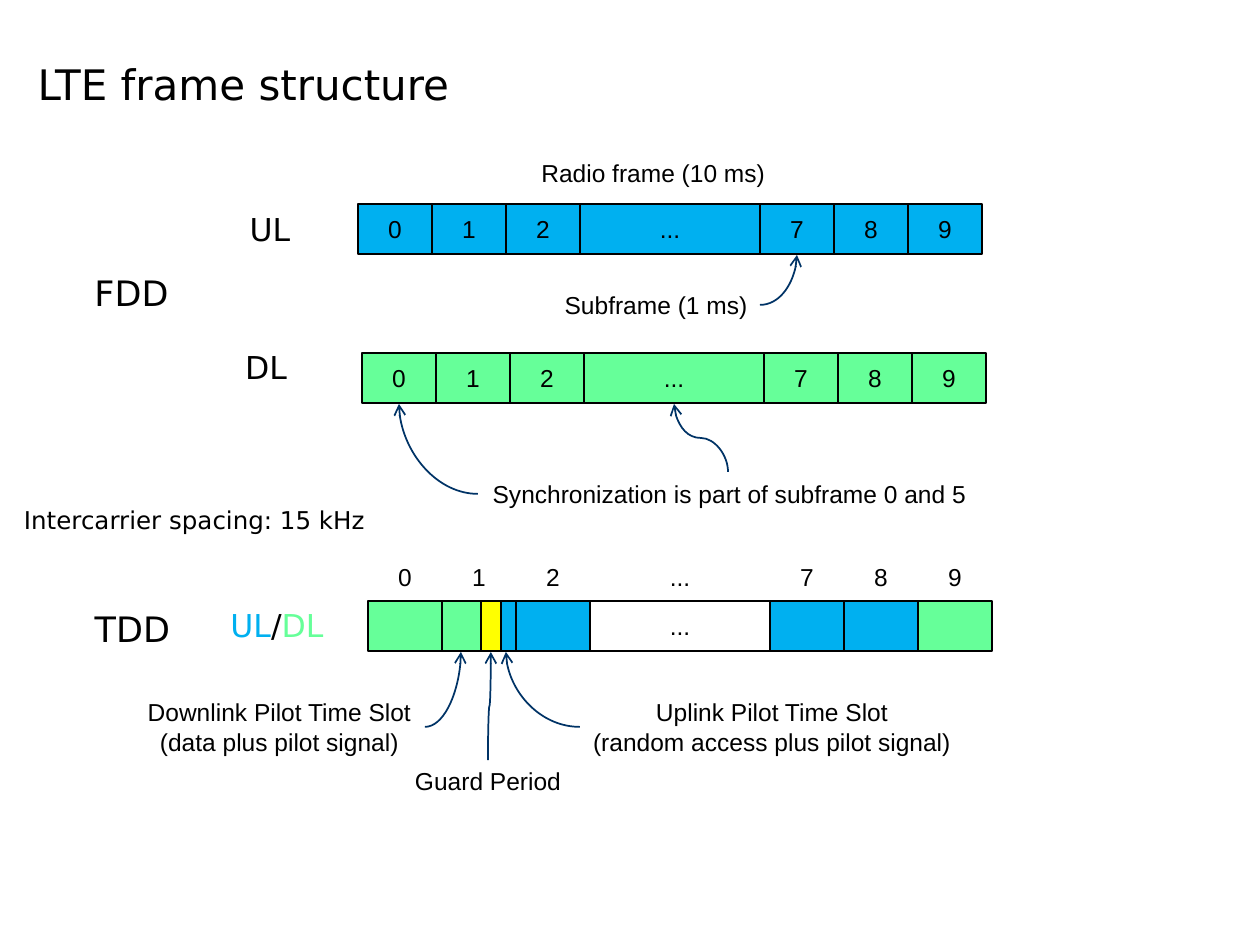
from copy import deepcopy
from itertools import accumulate
from lxml import etree
from pptx import Presentation
from pptx import util as u
from pptx.dml.color import RGBColor
from pptx.enum import shapes, text
from pptx.oxml import ns


class Theme:
    black, navy = "000000", "003366"
    up, down, guard = "00B0F0", "66FF99", "FFFF00"
    sans, deja = "Arial", "DejaVu Sans"
    small, mid, large, head = 14, 18, 20, 24
    edge, arrow = 0.75, 1


T = Theme
LEFT, MID, RIGHT = text.PP_ALIGN.LEFT, text.PP_ALIGN.CENTER, text.PP_ALIGN.RIGHT

# Content: lengths in px, 126 to the inch
TITLE = "LTE frame structure"
NAMES = ["0", "1", "2", "...", "7", "8", "9"]
WIDTHS = [74, 74, 74, 180, 74, 74, 74]
HIGH = 50

# left, top, cell texts, cell fills
FRAMES = [
    (358, 204, NAMES, [T.up] * 7),
    (362, 353, NAMES, [T.down] * 7),
    (368, 601, ["", "", "", "...", "", "", ""],
     [T.down, T.down, T.up, None, T.up, T.up, T.down]),
]
HEADS = (368, 552)
SLOTS = [(495, 601, 21, T.up), (481, 601, 20, T.guard)]

# box, align, text, font, size
LABELS = [
    ((529, 152, 249, 43), LEFT, "Radio frame (10 ms)", T.sans, T.small),
    ((551, 284, 209, 43), RIGHT, "Subframe (1 ms)", T.sans, T.small),
    ((82, 265, 99, 55), MID, "FDD", T.deja, T.large),
    ((237, 204, 66, 51), MID, "UL", T.deja, T.mid),
    ((232, 342, 68, 51), MID, "DL", T.deja, T.mid),
    ((82, 601, 101, 55), MID, "TDD", T.deja, T.large),
    ((478, 473, 501, 43), RIGHT,
     "Synchronization is part of subframe 0 and 5", T.sans, T.small),
    ((134, 691, 291, 72), MID,
     "Downlink Pilot Time Slot\n(data plus pilot signal)", T.sans, T.small),
    ((402, 760, 172, 43), MID, "Guard Period", T.sans, T.small),
    ((580, 691, 384, 72), MID,
     "Uplink Pilot Time Slot\n(random access plus pilot signal)", T.sans, T.small),
    ((6, 499, 377, 43), MID, "Intercarrier spacing: 15 kHz", T.deja, T.small),
]
DUPLEX = ((215, 600, 124, 51), [("UL", T.up), ("/", T.black), ("DL", T.down)])

# start x, y, end x, y
BENDS = [(760, 305, 797, 255), (478, 494, 399, 404),
         (425, 727, 461, 652), (580, 727, 506, 652)]
WAVES = [(728, 472, 674, 404), (488, 760, 491, 652)]


def px(*vals):
    return [u.Emu(int(v * 914400 / 126)) for v in vals]


def style(run, font, size, color=T.black):
    run.font.name, run.font.size = font, u.Pt(size)
    run.font.color.rgb = RGBColor.from_string(color)


def write(shape, words, font=T.sans, size=T.small, align=MID):
    para = shape.text_frame.paragraphs[0]
    para.text, para.alignment = words, align
    for run in para.runs:
        style(run, font, size)
    # Line breaks take the size of the text around them
    for gap in para._p.findall(ns.qn("a:br")):
        gap.insert(0, deepcopy(para.runs[0]._r.rPr))


def cell(x, y, w, fill):
    box = slide.shapes.add_shape(shapes.MSO_SHAPE.RECTANGLE, *px(x, y, w, HIGH))
    box.shadow.inherit = False
    if fill:
        box.fill.solid()
        box.fill.fore_color.rgb = RGBColor.from_string(fill)
    else:
        box.fill.background()
    box.line.color.rgb = RGBColor.from_string(T.black)
    box.line.width = u.Pt(T.edge)
    center(box)
    return box


def center(box):
    box.text_frame.word_wrap = False
    box.text_frame.vertical_anchor = text.MSO_ANCHOR.MIDDLE


def label(box):
    item = slide.shapes.add_textbox(*px(*box))
    item.text_frame.word_wrap = False
    item.text_frame.auto_size = text.MSO_AUTO_SIZE.SHAPE_TO_FIT_TEXT
    return item


def curve(x1, y1, x2, y2):
    line = slide.shapes.add_connector(
        shapes.MSO_CONNECTOR.CURVE, *px(x1, y1, x2, y2))
    line.line.color.rgb = RGBColor.from_string(T.navy)
    line.line.width = u.Pt(T.arrow)
    props = line._element.spPr
    etree.SubElement(props.find(ns.qn("a:ln")), ns.qn("a:tailEnd"), type="arrow")
    etree.SubElement(props, ns.qn("a:effectLst"))
    return props


deck = Presentation()
deck.slide_width, deck.slide_height = px(1260, 945)
slide = deck.slides.add_slide(deck.slide_layouts[5])

# Title
title = slide.shapes.title
title.left, title.top, title.width, title.height = px(25, 0, 833, 115)
title.text_frame.vertical_anchor = text.MSO_ANCHOR.BOTTOM
write(title, TITLE, T.deja, T.head, LEFT)

# Frames, each a row of subframes
steps = [0, *accumulate(WIDTHS)]
for left, top, names, fills in FRAMES:
    for step, wide, name, fill in zip(steps, WIDTHS, names, fills):
        box = cell(left + step, top, wide, fill)
        if name:
            write(box, name)

# Subframe numbers over the TDD frame
for step, wide, name in zip(steps, WIDTHS, NAMES):
    box = slide.shapes.add_textbox(*px(HEADS[0] + step, HEADS[1], wide, HIGH))
    center(box)
    write(box, name)

# Pilot slot and guard period inside TDD subframe 1
for slot in SLOTS:
    cell(*slot)

# Labels
for box, align, words, font, size in LABELS:
    write(label(box), words, font, size, align)

para = label(DUPLEX[0]).text_frame.paragraphs[0]
para.alignment = MID
for words, color in DUPLEX[1]:
    run = para.add_run()
    run.text = words
    style(run, T.deja, T.mid, color)

# Arrows with one bend leave sideways and end upright
for ends in BENDS:
    curve(*ends).find(ns.qn("a:prstGeom")).set("prst", "curvedConnector2")

# Arrows with two bends run upwards: laid flat, then turned by 270 degrees
for x1, y1, x2, y2 in WAVES:
    mx, my = (x1 + x2) / 2, (y1 + y2) / 2
    dx, dy = (x2 - x1) / 2, (y1 - y2) / 2
    curve(mx - dy, my - dx, mx + dy, my + dx).xfrm.set("rot", "16200000")

deck.save("out.pptx")
